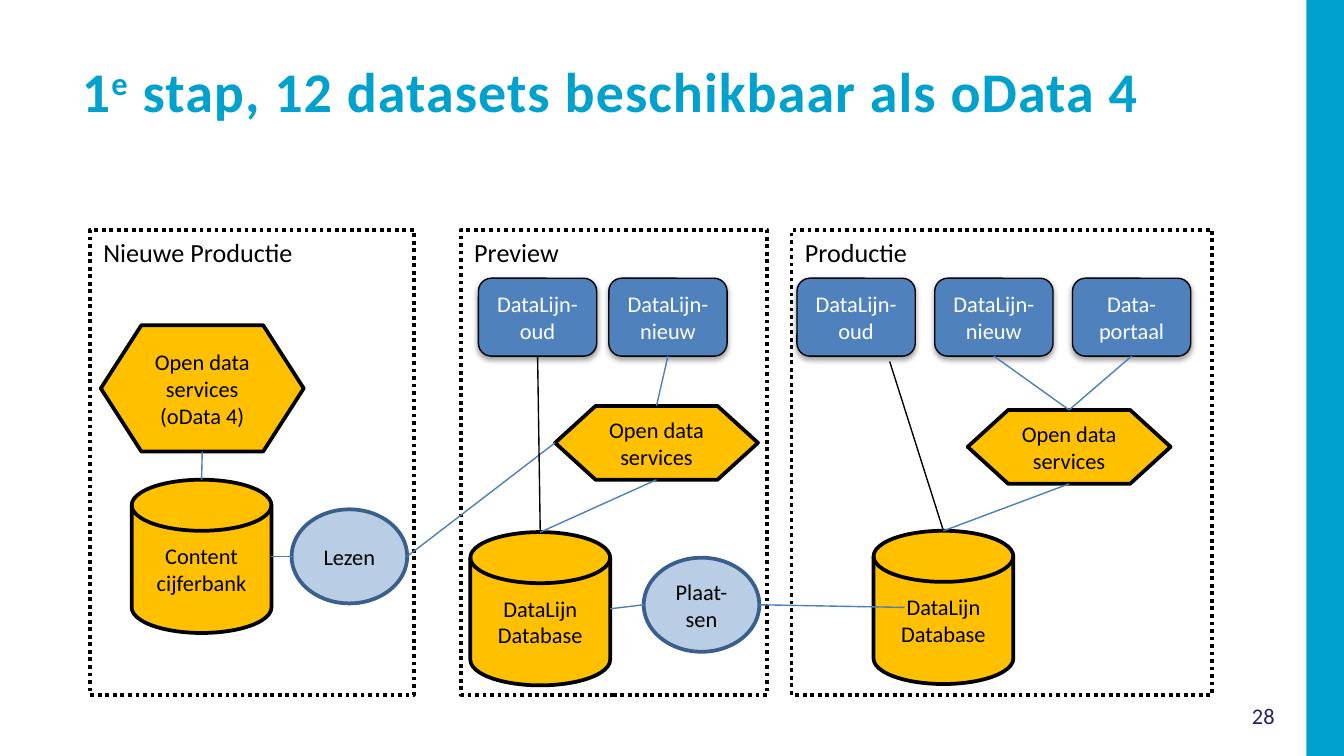
from dataclasses import dataclass

from lxml import etree
from pptx import Presentation
from pptx import util as u
from pptx.dml.color import RGBColor
from pptx.enum import dml, shapes, text
from pptx.oxml.ns import qn

COLUMNS, ROWS = 100, 56.25  # grid of square cells, 0.1 inch each
TOP, LEFT, BOTTOM, RIGHT = range(4)
KIND = shapes.MSO_SHAPE


@dataclass(frozen=True)
class Theme:
    font: str = "Calibri"
    accent: str = "00A1CD"
    number: str = "271D6C"
    ink: str = "000000"
    paper: str = "FFFFFF"
    store: str = "FFC000"
    app: str = "4F81BD"
    step: str = "B9CDE5"
    step_edge: str = "3A5F8C"
    link: str = "4B7EBC"
    title_size: float = 30
    frame_size: float = 14
    label_size: float = 12
    thin: float = 0.75
    thick: float = 2


THEME = Theme()


def cells(count):
    return u.Inches(count / 10)


def rgb(value):
    return RGBColor.from_string(value)


def write(shape, words, size, color, align, anchor):
    frame = shape.text_frame
    frame.word_wrap = True
    frame.vertical_anchor = anchor
    frame.text = words
    for para in frame.paragraphs:
        para.alignment = align
        for span in para.runs:
            span.font.name = THEME.font
            span.font.size = u.Pt(size)
            span.font.color.rgb = rgb(color)


def add_box(page, kind, area, fill=None, edge=None, width=THEME.thick):
    """Draw a preset shape; area is column, row, columns wide, rows high."""
    box = page.shapes.add_shape(kind, *map(cells, area))
    box.shadow.inherit = False
    if fill:
        box.fill.solid()
        box.fill.fore_color.rgb = rgb(fill)
    else:
        box.fill.background()
    if edge:
        box.line.color.rgb = rgb(edge)
        box.line.width = u.Pt(width)
    else:
        box.line.fill.background()
    return box


def add_label(box, words, color=THEME.ink):
    write(box, words, THEME.label_size, color,
          text.PP_ALIGN.CENTER, text.MSO_ANCHOR.MIDDLE)
    return box


def add_frame(page, column, wide, words):
    box = add_box(page, KIND.RECTANGLE, (column, 17.1, wide, 34.6), edge=THEME.ink)
    box.line.dash_style = dml.MSO_LINE.ROUND_DOT
    write(box, words, THEME.frame_size, THEME.ink,
          text.PP_ALIGN.LEFT, text.MSO_ANCHOR.TOP)


def add_store(page, column, row, words):
    area = (column, row, 10.4, 11.4)
    return add_label(add_box(page, KIND.FLOWCHART_MAGNETIC_DISK, area,
                             THEME.store, THEME.ink), words)


def add_service(page, column, row, high, words):
    area = (column, row, 15.1, high)
    return add_label(add_box(page, KIND.FLOWCHART_PREPARATION, area,
                             THEME.store, THEME.ink), words)


def add_step(page, column, row, words):
    area = (column, row, 8.6, 7)
    return add_label(add_box(page, KIND.OVAL, area, THEME.step, THEME.step_edge), words)


def add_drop_shadow(box):
    effects = box._element.spPr.find(qn("a:effectLst"))
    shadow = etree.SubElement(effects, qn("a:outerShdw"), blurRad=str(u.Pt(3.1)),
                              dist=str(u.Pt(1.6)), dir="5400000", rotWithShape="0")
    color = etree.SubElement(shadow, qn("a:srgbClr"), val=THEME.ink)
    etree.SubElement(color, qn("a:alpha"), val="38000")


def add_apps(page, column, pitch, names):
    """Draw a row of application boxes and return them from left to right."""
    apps = []
    for index, name in enumerate(names):
        area = (column + index * pitch, 20.7, 8.8, 5.8)
        box = add_box(page, KIND.ROUNDED_RECTANGLE, area,
                      THEME.app, THEME.ink, THEME.thin)
        add_drop_shadow(box)
        apps.append(add_label(box, name, THEME.paper))
    return apps


def side_point(box, side):
    across = {LEFT: 0, RIGHT: 1}.get(side, 0.5)
    down = {TOP: 0, BOTTOM: 1}.get(side, 0.5)
    return int(box.left + across * box.width), int(box.top + down * box.height)


def add_link(page, start, end, color=THEME.link):
    """Join two ends, each a (shape, side) pair or a (column, row) point."""
    def is_side(spot):
        return hasattr(spot[0], "auto_shape_type")

    def can_glue(spot):
        # disks and ovals number their connection sites differently
        return is_side(spot) and spot[0].auto_shape_type in (
            KIND.ROUNDED_RECTANGLE, KIND.FLOWCHART_PREPARATION)

    points = [side_point(*spot) if is_side(spot) else tuple(map(cells, spot))
              for spot in (start, end)]
    line = page.shapes.add_connector(shapes.MSO_CONNECTOR.STRAIGHT,
                                     *points[0], *points[1])
    if can_glue(start):
        line.begin_connect(*start)
    if can_glue(end):
        line.end_connect(*end)
    line.line.color.rgb = rgb(color)
    line.line.width = u.Pt(THEME.thin)
    etree.SubElement(line._element.spPr, qn("a:effectLst"))


def add_title(page, parts):
    """Fill the title from (words, baseline percentage) pairs."""
    title = page.shapes.title
    title.left, title.top, title.width, title.height = map(cells, (5.1, 3.7, 83.5, 6.3))
    frame = title.text_frame
    frame.auto_size = text.MSO_AUTO_SIZE.NONE
    frame.vertical_anchor = text.MSO_ANCHOR.TOP
    para = frame.paragraphs[0]
    para.alignment = text.PP_ALIGN.LEFT
    for words, baseline in parts:
        span = para.add_run()
        span.text = words
        span.font.name = THEME.font
        span.font.size = u.Pt(THEME.title_size)
        span.font.bold = True
        span.font.color.rgb = rgb(THEME.accent)
        properties = span._r.get_or_add_rPr()
        properties.set("spc", "60")
        if baseline:
            properties.set("baseline", str(baseline * 1000))


def add_page_number(page, number):
    box = page.shapes.add_textbox(*map(cells, (90.8, 51.5, 6.4, 3.5)))
    add_label(box, number, THEME.number)


def main():
    deck = Presentation()
    deck.slide_width, deck.slide_height = cells(COLUMNS), cells(ROWS)
    page = deck.slides.add_slide(deck.slide_layouts[5])
    add_box(page, KIND.RECTANGLE, (97.2, 0, 2.8, ROWS), THEME.accent)
    add_title(page, [("1", 0), ("e", 30), (" stap, 12 datasets beschikbaar als oData 4", 0)])
    add_page_number(page, "28")

    add_frame(page, 6.7, 24.1, "Nieuwe Productie")
    new_service = add_service(page, 7.5, 24.2, 9.4, "Open data services\n(oData 4)")
    content = add_store(page, 9.8, 35.7, "Content cijferbank")
    reading = add_step(page, 21.7, 37.9, "Lezen")

    add_frame(page, 34.3, 22.8, "Preview")
    old_app, new_app = add_apps(page, 35.6, 9.7, ["DataLijn-oud", "DataLijn-nieuw"])
    preview_service = add_service(page, 41.3, 30.2, 5.5, "Open data services")
    preview_store = add_store(page, 35, 39.6, "DataLijn Database")
    placing = add_step(page, 47.9, 41.5, "Plaat-sen")

    add_frame(page, 58.9, 31.3, "Productie")
    live_apps = add_apps(page, 59.3, 10.25,
                         ["DataLijn-oud", "DataLijn-nieuw", "Data-portaal"])
    live_service = add_service(page, 72, 30.5, 5.5, "Open data services")
    live_store = add_store(page, 65, 39.5, "DataLijn Database")

    add_link(page, (content, TOP), (new_service, BOTTOM))
    add_link(page, (reading, LEFT), (content, RIGHT))
    add_link(page, (preview_service, LEFT), (reading, RIGHT))
    add_link(page, (old_app, BOTTOM), (preview_store, TOP), THEME.ink)
    add_link(page, (preview_service, TOP), (new_app, BOTTOM))
    add_link(page, (preview_store, TOP), (preview_service, BOTTOM))
    add_link(page, (preview_store, RIGHT), (placing, LEFT))
    add_link(page, (placing, RIGHT), (67.3, 45.2))
    add_link(page, (66.2, 26.9), (live_store, TOP), THEME.ink)
    for app in live_apps[1:]:
        add_link(page, (live_service, TOP), (app, BOTTOM))
    add_link(page, (live_service, BOTTOM), (live_store, TOP))
    deck.save("out.pptx")


if __name__ == "__main__":
    main()
